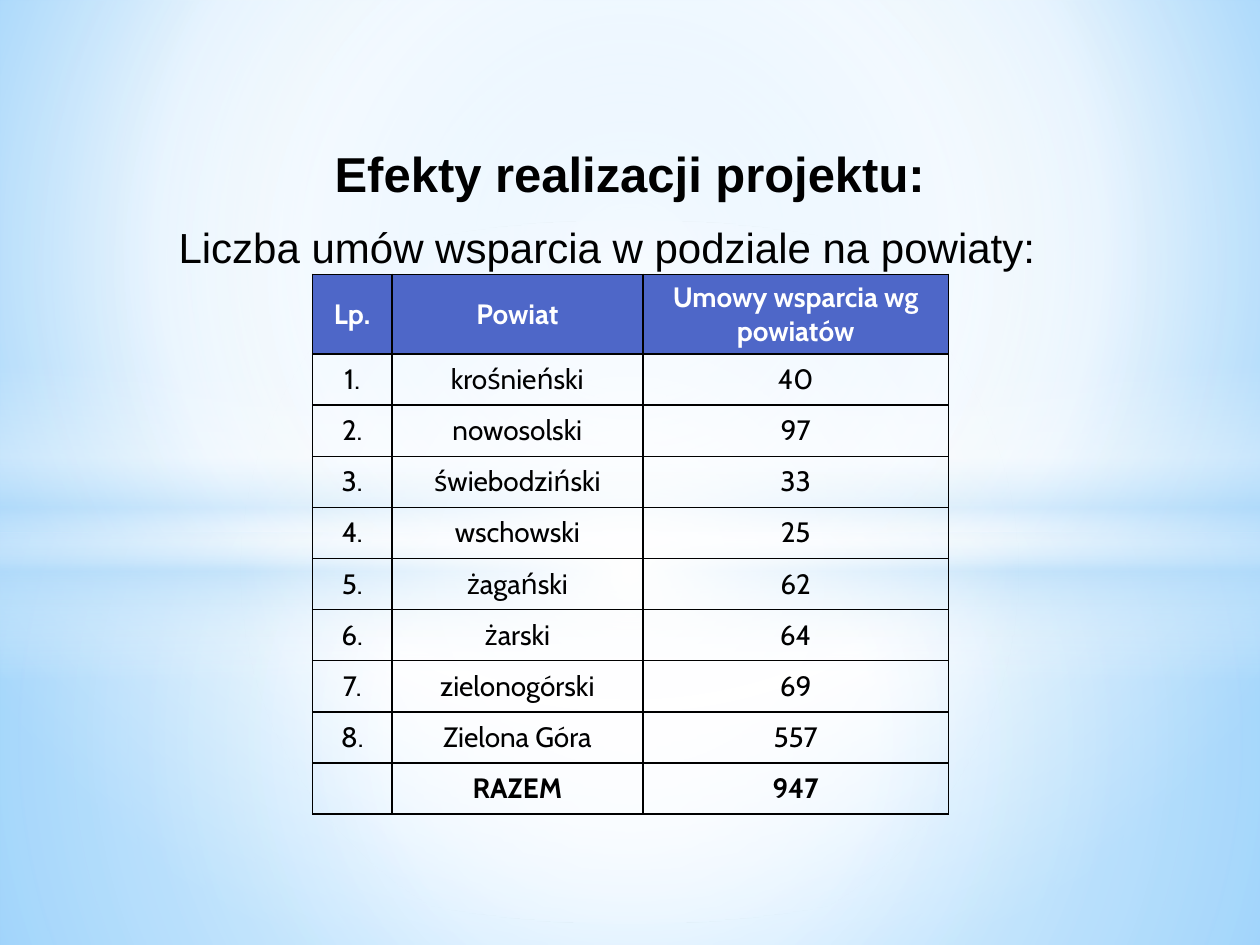
from lxml.etree import SubElement
from pptx import Presentation
from pptx.dml.color import RGBColor
from pptx.enum.shapes import MSO_SHAPE
from pptx.enum.text import MSO_ANCHOR, PP_ALIGN
from pptx.oxml import parse_xml
from pptx.oxml.ns import nsdecls, qn
from pptx.util import Cm, Pt

SUPPORTS = [
    ("krośnieński", 40),
    ("nowosolski", 97),
    ("świebodziński", 33),
    ("wschowski", 25),
    ("żagański", 62),
    ("żarski", 64),
    ("zielonogórski", 69),
    ("Zielona Góra", 557),
]
HEADINGS = ("Lp.", "Powiat", "Umowy wsparcia wg powiatów")
COLUMN_WIDTHS = (1.6, 5.06, 6.16)
HEADER_HEIGHT, ROW_HEIGHT = 1.6, 1.03
CENTRE = (50, 50, 50, 50)


def color(value):
    """Turn a hex string into a colour."""
    return RGBColor.from_string(value)


def set_gradient(element, stops, focus=None):
    """Replace the first solid fill with a gradient: circular at focus, else vertical."""
    gradient = parse_xml(f'<a:gradFill {nsdecls("a")} rotWithShape="1"><a:gsLst/></a:gradFill>')
    for position, value, opacity in stops:
        stop = SubElement(gradient[0], qn("a:gs"), pos=str(position * 1000))
        tint = SubElement(stop, qn("a:srgbClr"), val=value)
        if opacity < 100:
            SubElement(tint, qn("a:alpha"), val=str(opacity * 1000))
    if focus:
        circle = SubElement(gradient, qn("a:path"), path="circle")
        edges = {side: str(inset * 1000) for side, inset in zip("ltrb", focus)}
        SubElement(circle, qn("a:fillToRect"), **edges)
    else:
        SubElement(gradient, qn("a:lin"), ang="5400000", scaled="0")
    solid = next(element.iter(qn("a:solidFill")))
    solid.getparent().replace(solid, gradient)


def add_glow(slide, box, stops, focus=None, kind=MSO_SHAPE.RECTANGLE):
    """Place one translucent gradient shape in the box."""
    shape = slide.shapes.add_shape(kind, *map(Cm, box))
    shape.shadow.inherit = False
    shape.line.fill.background()
    shape.fill.solid()
    set_gradient(shape.element, stops, focus)


def add_backdrop(slide, width, height, horizon):
    """Paint the sky, the water and the light between them."""
    slide.background.fill.solid()
    set_gradient(
        slide.element,
        [(0, "9ED5FF", 100), (60, "FFFFFF", 100), (100, "5BB9FF", 100)],
        (20, 10, 20, 60),
    )
    add_glow(slide, (0, horizon, width, height - horizon),
             [(0, "FFFFFF", 91), (37, "FFFFFF", 76), (100, "B4DCFA", 79)], CENTRE)
    add_glow(slide, (0, 0, width, horizon),
             [(0, "FFFFFF", 89), (48, "FFFFFF", 62), (100, "B4DCFA", 79)], CENTRE)
    add_glow(slide, (0, horizon - 3.38, width, 6.35),
             [(0, "FFFFFF", 0), (29, "FFFFFF", 30), (45, "B4DCFA", 40),
              (55, "FFFFFF", 26), (65, "B4DCFA", 60), (100, "FFFFFF", 0)])
    add_glow(slide, (0, 4.45, width, 14.17),
             [(0, "FFFFFF", 100), (54, "FFFFFF", 0)], CENTRE, MSO_SHAPE.OVAL)


def style_paragraph(paragraph, name, size, value, bold, alignment):
    """Set the font and alignment of a paragraph."""
    paragraph.alignment = alignment
    paragraph.font.name = name
    paragraph.font.size = Pt(size)
    paragraph.font.bold = bold
    paragraph.font.color.rgb = color(value)


def add_heading(slide, left, top, width, height):
    """Place the title and the line that introduces the table."""
    frame = slide.shapes.add_textbox(Cm(left), Cm(top), Cm(width), Cm(height)).text_frame
    frame.word_wrap = True
    frame.margin_top = Cm(0.96)
    title = frame.paragraphs[0]
    title.text = "Efekty realizacji projektu:"
    style_paragraph(title, "Arial", 28, "000000", True, PP_ALIGN.CENTER)
    subtitle = frame.add_paragraph()
    subtitle.text = "Liczba umów wsparcia w podziale na powiaty:"
    subtitle.space_before = Pt(11)
    style_paragraph(subtitle, "Arial", 24, "000000", False, PP_ALIGN.LEFT)


def add_borders(cell):
    """Draw a thin black line on each side of a cell."""
    properties = cell._tc.get_or_add_tcPr()
    for index, side in enumerate("LRTB"):
        properties.insert(index, parse_xml(
            f'<a:ln{side} {nsdecls("a")} w="12700"><a:solidFill>'
            f'<a:srgbClr val="000000"/></a:solidFill></a:ln{side}>'))


def add_support_table(slide, left, top):
    """Place the table of supports by district with its total."""
    rows = [HEADINGS]
    rows += [(f"{number}.", *support) for number, support in enumerate(SUPPORTS, 1)]
    rows.append(("", "RAZEM", sum(count for _, count in SUPPORTS)))
    last = len(rows) - 1
    table = slide.shapes.add_table(
        len(rows), len(HEADINGS), Cm(left), Cm(top),
        Cm(sum(COLUMN_WIDTHS)), Cm(HEADER_HEIGHT + last * ROW_HEIGHT)).table
    table.first_row = table.horz_banding = False
    for column, width in zip(table.columns, COLUMN_WIDTHS):
        column.width = Cm(width)
    for row_index, values in enumerate(rows):
        header = row_index == 0
        table.rows[row_index].height = Cm(HEADER_HEIGHT if header else ROW_HEIGHT)
        for cell, value in zip(table.rows[row_index].cells, values):
            cell.text = str(value)
            cell.vertical_anchor = MSO_ANCHOR.MIDDLE
            style_paragraph(cell.text_frame.paragraphs[0], "Cabin", 16,
                            "FFFFFF" if header else "000000",
                            row_index in (0, last), PP_ALIGN.CENTER)
            if header:
                cell.fill.solid()
                cell.fill.fore_color.rgb = color("4E67C8")
            else:
                cell.fill.background()
            add_borders(cell)


def main():
    """Build the slide and save it."""
    presentation = Presentation()
    presentation.slide_width, presentation.slide_height = Cm(25.4), Cm(19.05)
    slide = presentation.slides.add_slide(presentation.slide_layouts[6])
    add_backdrop(slide, 25.4, 19.05, 10.74)
    add_heading(slide, 3.35, 1.93, 18.69, 4.37)
    add_support_table(slide, 6.3, 5.53)
    presentation.save("out.pptx")


if __name__ == "__main__":
    main()
